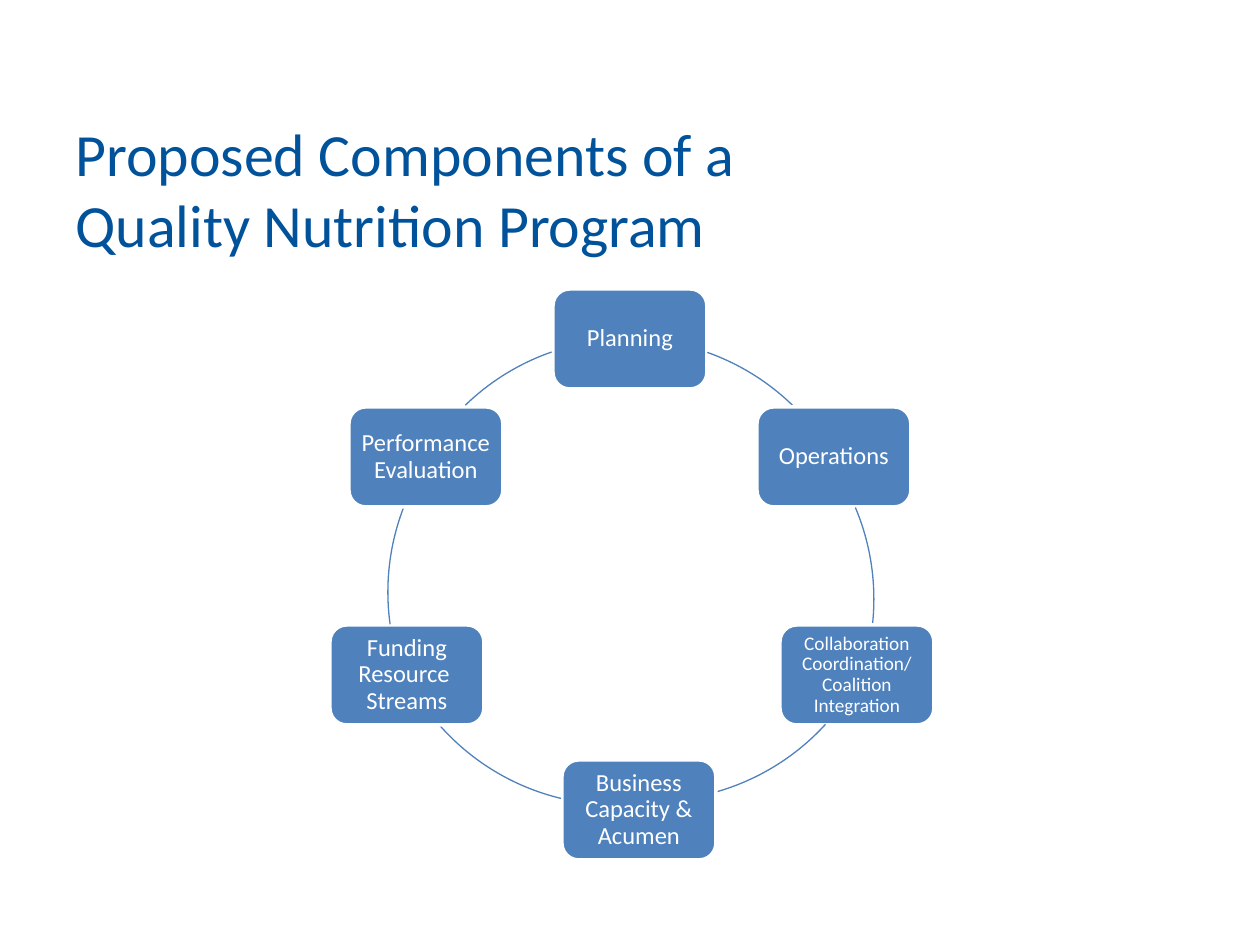
import pptx
import pptx.util
import pptx.dml.color
import pptx.enum.shapes
import pptx.enum.text

PX = 914400 // 126
FONT = "Calibri"
NODE_WIDTH, NODE_HEIGHT = 154, 100
RING_SIZE = 470
BLUE, NAVY, WHITE = "4F81BD", "00529B", "FFFFFF"

TITLE = "Proposed Components of a\vQuality Nutrition Program"

# text, left, top, font size, inset
COMPONENTS = [
    ("Planning", 553, 289, 14, 7),
    ("Operations", 757, 407, 14, 7),
    ("Collaboration Coordination/\nCoalition\nIntegration", 780, 625, 11, 6),
    ("Business\nCapacity &\nAcumen", 562, 760, 14, 7),
    ("Funding\nResource \nStreams", 330, 625, 14, 7),
    ("Performance\nEvaluation", 349, 407, 14, 7),
]

# left and top of the full circle, start and end angle (clockwise from east)
ARCS = [
    (394, 339, 289.5, 314.4),
    (404, 364, 337.1, 6),
    (417, 331, 42.4, 74),
    (381, 335, 103.5, 138.7),
    (388, 357, 172.1, 201),
    (394, 339, 225.9, 250.8),
]


def px(*lengths):
    return [pptx.util.Emu(length * PX) for length in lengths]


def color(hex_value):
    return pptx.dml.color.RGBColor.from_string(hex_value)


def write(shape, text, size, text_color, inset=None, alignment=None, spacing=None):
    frame = shape.text_frame
    frame.word_wrap = True
    frame.vertical_anchor = pptx.enum.text.MSO_ANCHOR.MIDDLE
    if inset is not None:
        (margin,) = px(inset)
        frame.margin_left = frame.margin_right = margin
        frame.margin_top = frame.margin_bottom = margin
    frame.text = text
    for para in frame.paragraphs:
        para.alignment = alignment
        para.line_spacing = spacing
        for span in para.runs:
            span.font.name = FONT
            span.font.size = pptx.util.Pt(size)
            span.font.color.rgb = color(text_color)


def add_outlined(page, preset, bounds, line_color, line_width):
    shape = page.shapes.add_shape(preset, *px(*bounds))
    shape.shadow.inherit = False
    shape.line.color.rgb = color(line_color)
    shape.line.width = pptx.util.Pt(line_width)
    return shape


def add_component(page, text, left, top, size, inset):
    node = add_outlined(page, pptx.enum.shapes.MSO_SHAPE.ROUNDED_RECTANGLE,
                        (left, top, NODE_WIDTH, NODE_HEIGHT), WHITE, 2)
    node.fill.solid()
    node.fill.fore_color.rgb = color(BLUE)
    write(node, text, size, WHITE, inset, pptx.enum.text.PP_ALIGN.CENTER, 0.9)


def add_arc(page, left, top, start, end):
    arc = add_outlined(page, pptx.enum.shapes.MSO_SHAPE.ARC,
                       (left, top, RING_SIZE, RING_SIZE), BLUE, 0.75)
    arc.fill.background()
    # Angles are stored in 60000ths of a degree, adjustments in 100000ths.
    for index, angle in enumerate((start, end)):
        arc.adjustments[index] = angle * 0.6


def main():
    deck = pptx.Presentation()
    deck.slide_width, deck.slide_height = px(1260, 945)
    page = deck.slides.add_slide(deck.slide_layouts[6])

    title = page.shapes.add_textbox(*px(63, 146, 1134, 84))
    write(title, TITLE, 34.2, NAVY)

    for component, arc in zip(COMPONENTS, ARCS):
        add_component(page, *component)
        add_arc(page, *arc)

    deck.save("out.pptx")


if __name__ == "__main__":
    main()
